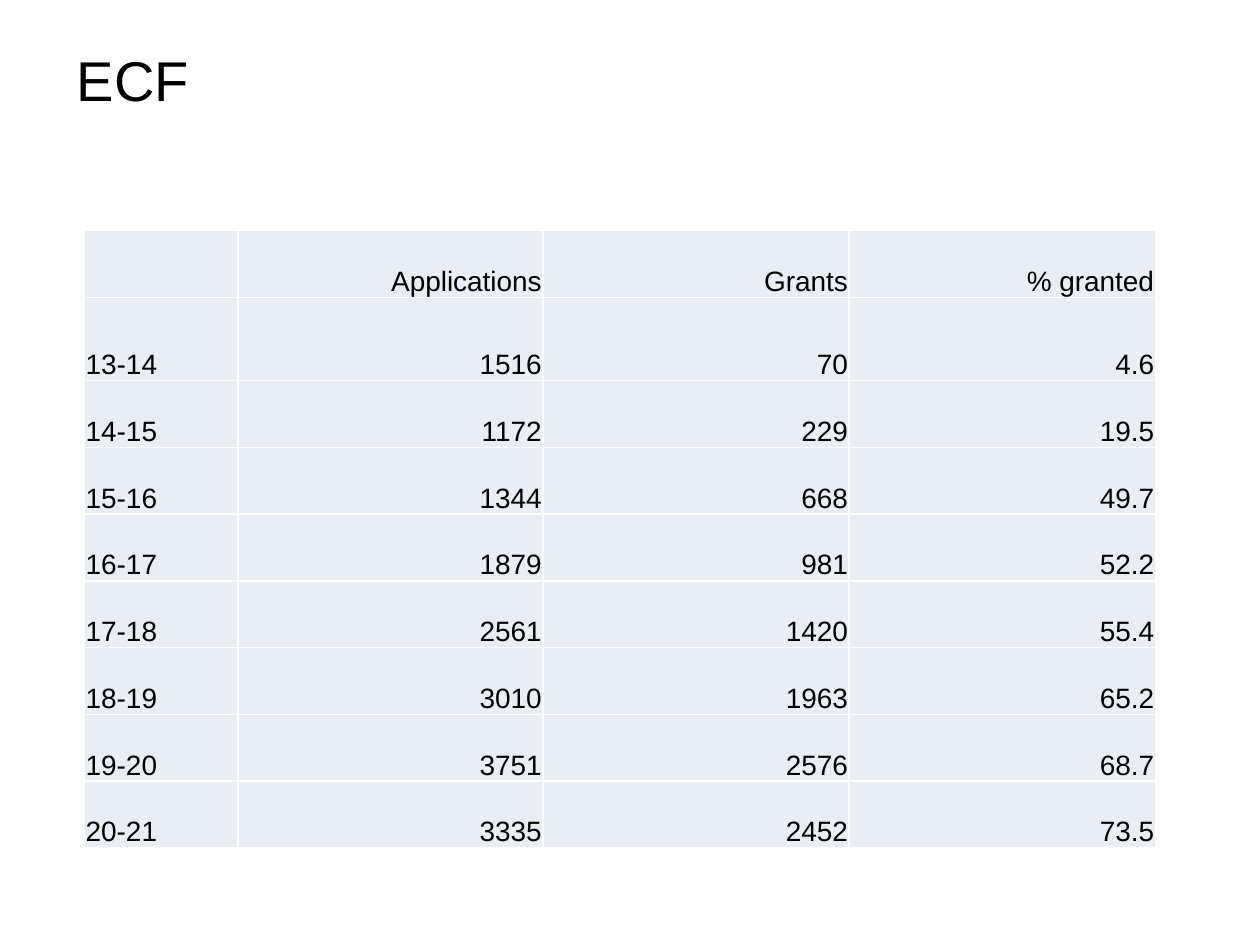
from lxml import etree
from pptx import Presentation
from pptx.dml.color import RGBColor
from pptx.enum.text import MSO_ANCHOR, PP_ALIGN
from pptx.oxml.ns import qn
from pptx.util import Inches, Pt

MIDDLE, BOTTOM = MSO_ANCHOR.MIDDLE, MSO_ANCHOR.BOTTOM
LEFT, RIGHT = PP_ALIGN.LEFT, PP_ALIGN.RIGHT
FONT, BLACK, WHITE, PALE = "Arial", "000000", "FFFFFF", "E9EDF4"
TITLE_ONLY = 5
COL_WIDTHS = [1.22, 2.42, 2.43, 2.43]
ROW_HEIGHT, FIRST_YEAR_HEIGHT = 0.53, 0.66
ROWS = [
    ("", "Applications", "Grants", "% granted"),
    ("13-14", "1516", "70", "4.6"),
    ("14-15", "1172", "229", "19.5"),
    ("15-16", "1344", "668", "49.7"),
    ("16-17", "1879", "981", "52.2"),
    ("17-18", "2561", "1420", "55.4"),
    ("18-19", "3010", "1963", "65.2"),
    ("19-20", "3751", "2576", "68.7"),
    ("20-21", "3335", "2452", "73.5"),
]


def rgb(color):
    """Return the colour for a hex string."""
    return RGBColor.from_string(color)


def format_paragraph(p, size, align):
    """Set the font and alignment of a paragraph."""
    p.alignment = align
    p.font.name = FONT
    p.font.size = Pt(size)
    p.font.color.rgb = rgb(BLACK)


def add_title(slide, text):
    """Place and format the title."""
    sp = slide.shapes.title
    sp.left, sp.top = Inches(0.51), Inches(0)
    sp.width, sp.height = Inches(7.75), Inches(1.25)
    tf = sp.text_frame
    tf.text = text
    tf.vertical_anchor = MIDDLE
    format_paragraph(tf.paragraphs[0], 32, LEFT)


def set_borders(cell, color, width):
    """Draw a solid line on all four sides of a cell."""
    tc_pr = cell._tc.get_or_add_tcPr()
    for side in ("a:lnL", "a:lnR", "a:lnT", "a:lnB"):
        ln = etree.SubElement(tc_pr, qn(side), w=str(Pt(width)))
        fill = etree.SubElement(ln, qn("a:solidFill"))
        etree.SubElement(fill, qn("a:srgbClr"), val=color)


def fill_cell(cell, text, align):
    """Write and format one table cell."""
    cell.text = text
    cell.vertical_anchor = BOTTOM
    cell.margin_left = cell.margin_right = cell.margin_top = Inches(0.01)
    cell.margin_bottom = Inches(0)
    set_borders(cell, WHITE, 1)
    cell.fill.solid()
    cell.fill.fore_color.rgb = rgb(PALE)
    format_paragraph(cell.text_frame.paragraphs[0], 16, align)


def add_grants_table(slide):
    """Add the table of applications and grants by year."""
    heights = [ROW_HEIGHT] * len(ROWS)
    heights[1] = FIRST_YEAR_HEIGHT
    table = slide.shapes.add_table(
        len(ROWS), len(COL_WIDTHS), Inches(0.67), Inches(1.83),
        Inches(sum(COL_WIDTHS)), Inches(sum(heights))).table
    table.first_row = table.horz_banding = False
    for column, width in zip(table.columns, COL_WIDTHS):
        column.width = Inches(width)
    for row, height, values in zip(table.rows, heights, ROWS):
        row.height = Inches(height)
        for i, (cell, value) in enumerate(zip(row.cells, values)):
            fill_cell(cell, value, RIGHT if i else LEFT)


def main():
    """Build the slide and save it."""
    prs = Presentation()
    prs.slide_width, prs.slide_height = Inches(10), Inches(7.5)
    slide = prs.slides.add_slide(prs.slide_layouts[TITLE_ONLY])
    add_title(slide, "ECF")
    add_grants_table(slide)
    prs.save("out.pptx")


if __name__ == "__main__":
    main()
